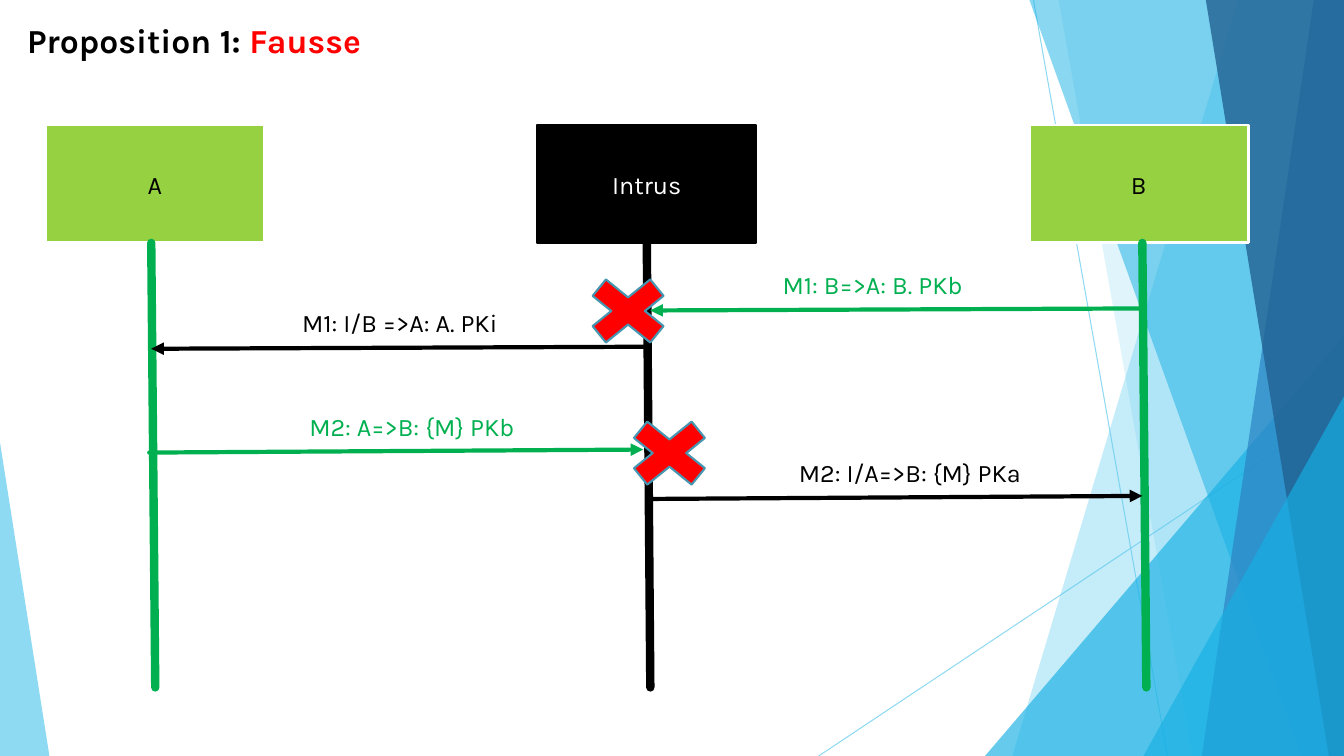
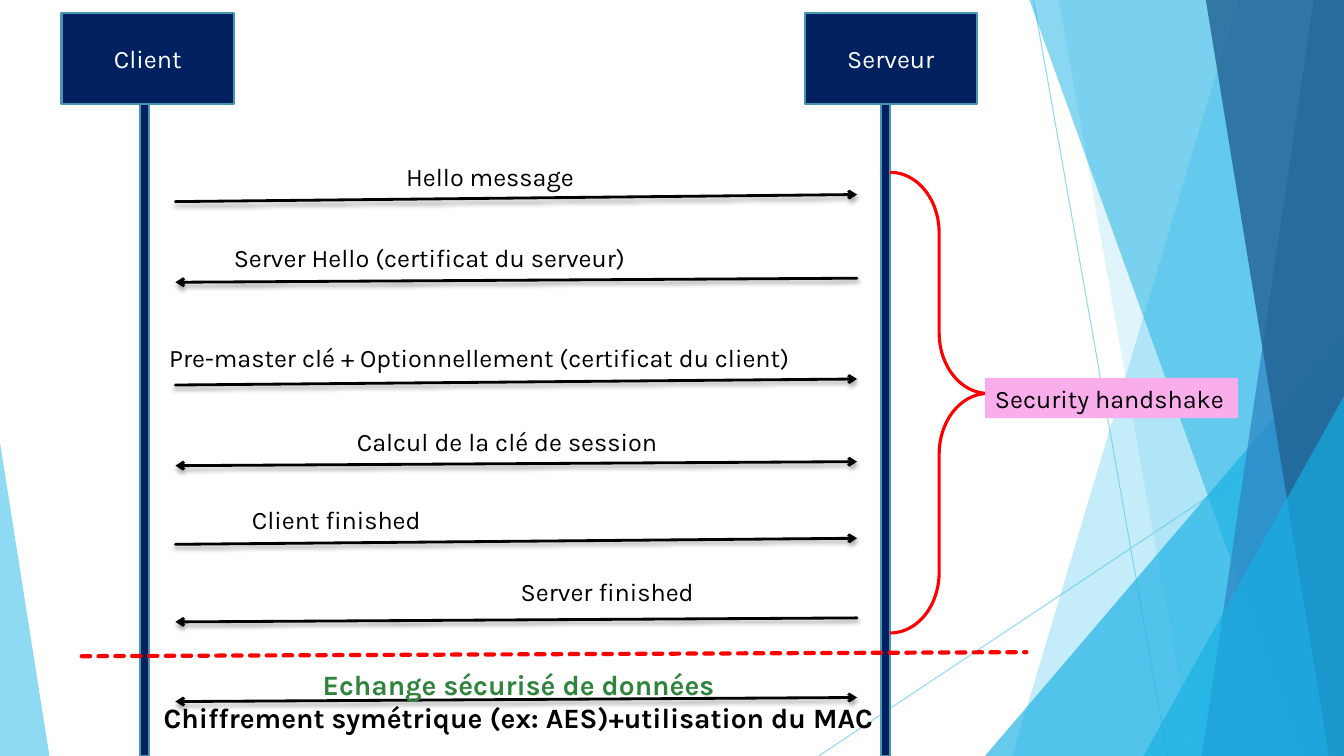
from lxml.etree import SubElement
from pptx import Presentation
from pptx.dml.color import RGBColor
from pptx.enum.dml import MSO_LINE
from pptx.enum.shapes import MSO_CONNECTOR, MSO_SHAPE as SHAPE
from pptx.enum.text import MSO_ANCHOR as ANCHOR, PP_ALIGN as ALIGN
from pptx.oxml.ns import qn
from pptx.util import Inches, Pt

W, H = 13.33, 7.5
FONT = "Karla"
COLORS = {
    "black": "000000", "white": "FFFFFF", "red": "FF0000", "green": "00B050",
    "lime": "96D141", "navy": "002060", "teal": "4696B1", "pink": "F9ADEB",
    "forest": "31843D", "sky": "5FCBEF", "cyan": "17B0E4", "blue": "2E83C3",
    "deep": "226292",
}


def rgb(name):
    return RGBColor.from_string(COLORS[name])


# Basic elements

def set_alpha(shape, percent):
    clr = shape._element.spPr.find(f".//{qn('a:srgbClr')}")
    SubElement(clr, qn("a:alpha"), val=str(percent * 1000))


def style_shape(shape, fill=None, line=None, width=1.5, alpha=None):
    shape.shadow.inherit = False
    if fill:
        shape.fill.solid()
        shape.fill.fore_color.rgb = rgb(fill)
    else:
        shape.fill.background()
    if line:
        shape.line.color.rgb = rgb(line)
        shape.line.width = Pt(width)
    else:
        shape.line.fill.background()
    if alpha:
        set_alpha(shape, alpha)


def add_shape(s, kind, at, fill=None, line=None, width=1.5, alpha=None, adj=()):
    shape = s.shapes.add_shape(kind, *map(Inches, at))
    style_shape(shape, fill, line, width, alpha)
    for i, value in enumerate(adj):
        shape.adjustments[i] = value
    return shape


def add_line(s, start, end, color, width, head=None, tail=None, dash=None,
             alpha=None, shadow=False):
    line = s.shapes.add_connector(MSO_CONNECTOR.STRAIGHT,
                                  *map(Inches, (*start, *end)))
    line.line.color.rgb = rgb(color)
    line.line.width = Pt(width)
    if dash:
        line.line.dash_style = dash
    if alpha:
        set_alpha(line, alpha)
    spPr = line._element.spPr
    ln = spPr.find(qn("a:ln"))
    ln.set("cap", "rnd")
    for tag, arrow in (("a:headEnd", head), ("a:tailEnd", tail)):
        if arrow:
            SubElement(ln, qn(tag), type=arrow)
    effects = SubElement(spPr, qn("a:effectLst"))
    if shadow:
        outer = SubElement(effects, qn("a:outerShdw"), blurRad=str(Pt(3)),
                           dist=str(Pt(2)), dir="5400000", rotWithShape="0")
        clr = SubElement(outer, qn("a:srgbClr"), val=COLORS["black"])
        SubElement(clr, qn("a:alpha"), val="35000")
    return line


def write(shape, paragraphs, size=18, bold=False, align=ALIGN.CENTER,
          anchor=ANCHOR.MIDDLE):
    """Each paragraph is a list of (text, colour) runs."""
    tf = shape.text_frame
    tf.word_wrap = True
    tf.vertical_anchor = anchor
    for i, runs in enumerate(paragraphs):
        p = tf.add_paragraph() if i else tf.paragraphs[0]
        p.alignment = align
        p.font.name, p.font.size, p.font.bold = FONT, Pt(size), bold
        for text, color in runs:
            r = p.add_run()
            r.text = text
            r.font.color.rgb = rgb(color)


def add_text(s, at, paragraphs, **style):
    write(s.shapes.add_textbox(*map(Inches, at)), paragraphs, **style)


def add_actor(s, name, at, fill, color, line, width=1.5):
    box = add_shape(s, SHAPE.RECTANGLE, at, fill, line, width)
    write(box, [[(name, color)]])
    return box


# Shared backdrop

def add_band(s, top_x, bottom_x, color, alpha):
    """Fill from a slanted edge to the right side of the slide."""
    corners = [(top_x, 0), (W, 0), (W, H), (bottom_x, H)]
    points = [(Inches(x), Inches(y)) for x, y in corners]
    builder = s.shapes.build_freeform(*points[0])
    builder.add_line_segments(points[1:], close=True)
    style_shape(builder.convert_to_shape(), color, alpha=alpha)


def add_corner(s, left, top, width, color, alpha, apex=1):
    """Triangle that stands on the bottom edge of the slide."""
    add_shape(s, SHAPE.ISOSCELES_TRIANGLE, (left, top, width, H - top), color,
              alpha=alpha, adj=[apex])


def add_backdrop(s):
    for start, end in (((10.25, 0), (11.58, H)), ((W, 4.03), (8.12, H))):
        add_line(s, start, end, "sky", 0.75, alpha=70)
    add_band(s, 12.28, 10.04, "sky", 36)
    add_band(s, 10.5, 11.83, "sky", 20)
    add_corner(s, 9.77, 3.33, 3.56, "cyan", 66)
    add_band(s, 10.21, 12.91, "cyan", 50)
    add_band(s, 13.03, 11.92, "blue", 70)
    add_band(s, 11.96, 13.18, "deep", 80)
    add_corner(s, 11.34, 3.93, 1.99, "cyan", 66)
    add_corner(s, 0, 4.39, 0.49, "sky", 70, apex=0)


def new_slide(prs):
    s = prs.slides.add_slide(prs.slide_layouts[6])
    add_backdrop(s)
    return s


# Slide 1: intruder between A and B

def build_proposition(prs):
    s = new_slide(prs)
    top, width, height = 1.24, 2.17, 1.17
    boxes = {}
    for name, left, fill, color, line, weight in (
            ("A", 0.45, "lime", "black", "white", 2),
            ("B", 10.21, "lime", "black", "white", 2),
            ("Intrus", 5.33, "black", "white", "black", 1.5)):
        boxes[name] = add_actor(s, name, (left, top, width, height), fill,
                                color, line, weight)

    # Lifelines
    for x, color in ((6.41, "black"), (1.5, "green"), (11.33, "green")):
        lifeline = add_line(s, (x, top + height), (x + 0.04, 6.82), color, 6)
        if color == "black":
            lifeline.begin_connect(boxes["Intrus"], 2)

    # Messages
    for text, color, start, end, at in (
            ("M1: B=>A: B. PKb", "green", (11.35, 3.06), (6.45, 3.08),
             (7.57, 2.55, 2.17)),
            ("M1: I/B =>A: A. PKi", "black", (6.4, 3.44), (1.5, 3.46),
             (2.64, 2.93, 2.65)),
            ("M2: A=>B: {M} PKb", "green", (1.48, 4.49), (6.38, 4.46),
             (2.66, 3.96, 2.85)),
            ("M2: I/A=>B: {M} PKa", "black", (6.43, 4.95), (11.33, 4.92),
             (7.6, 4.42, 2.85))):
        add_line(s, start, end, color, 3, tail="triangle")
        add_text(s, (*at, 0.54), [[(text, color)]])

    # Blocked messages
    for left, y in ((5.68, 2.64), (6.09, 4.05)):
        add_shape(s, SHAPE.MATH_MULTIPLY, (left, y, 1.1, 0.89), "red", "teal")

    add_text(s, (0.17, 0.15, 4.35, 0.5),
             [[("Proposition 1: ", "black"), ("Fausse", "red")]],
             size=24, bold=True, align=ALIGN.LEFT, anchor=ANCHOR.TOP)


# Slide 2: handshake between client and server

def build_handshake(prs):
    s = new_slide(prs)
    for name, left, bar_left in (("Client", 0.61, 1.39),
                                 ("Serveur", 7.98, 8.74)):
        add_actor(s, name, (left, 0.13, 1.71, 0.9), "navy", "white", "teal")
        add_shape(s, SHAPE.RECTANGLE, (bar_left, 1.03, 0.09, H - 1.03),
                  "navy", "teal")

    # Arrows: height at the client and server ends, head at each end
    client_x, server_x = 1.74, 8.5
    for client_y, server_y, head, tail in (
            (2, 1.93, None, "arrow"), (2.8, 2.76, "arrow", None),
            (3.82, 3.76, None, "arrow"), (4.62, 4.58, "arrow", "arrow"),
            (5.4, 5.34, None, "arrow"), (6.17, 6.13, "arrow", None),
            (6.96, 6.92, "arrow", "arrow")):
        add_line(s, (client_x, client_y), (server_x, server_y), "black", 2,
                 head, tail, shadow=True)

    # Message labels
    for text, left, top, width, align in (
            ("Hello message", 3.93, 1.55, 1.9, ALIGN.LEFT),
            ("Server Hello (certificat du serveur)", 2.22, 2.35, 6.01,
             ALIGN.LEFT),
            ("Pre-master clé + Optionnellement (certificat du client)", 1.58,
             3.35, 7.5, ALIGN.LEFT),
            ("Calcul de la clé de session", 1.28, 4.18, 7.5, ALIGN.CENTER),
            ("Client finished", 2.4, 4.95, 2.78, ALIGN.LEFT),
            ("Server finished", 4.56, 5.67, 2.42, ALIGN.RIGHT)):
        add_text(s, (left, top, width, 0.4), [[(text, "black")]], align=align,
                 anchor=ANCHOR.TOP)
    add_text(s, (1.48, 6.57, 7.33, 0.77),
             [[("Echange sécurisé de données", "forest")],
              [("Chiffrement symétrique (ex: AES)+utilisation du MAC",
                "black")]],
             size=20, bold=True, anchor=ANCHOR.TOP)

    # End of the handshake and its brace
    add_line(s, (0.81, 6.51), (10.18, 6.47), "red", 3,
             dash=MSO_LINE.SQUARE_DOT)
    add_shape(s, SHAPE.RIGHT_BRACE, (8.83, 1.71, 0.97, 4.57), line="red",
              width=2.25, adj=(0.62, 0.48))
    tag = add_shape(s, SHAPE.RECTANGLE, (9.77, 3.75, 2.51, 0.4), "pink")
    write(tag, [[("Security handshake", "black")]], align=ALIGN.LEFT,
          anchor=ANCHOR.TOP)


def main():
    prs = Presentation()
    prs.slide_width, prs.slide_height = Inches(W), Inches(H)
    build_proposition(prs)
    build_handshake(prs)
    prs.save("out.pptx")


if __name__ == "__main__":
    main()
